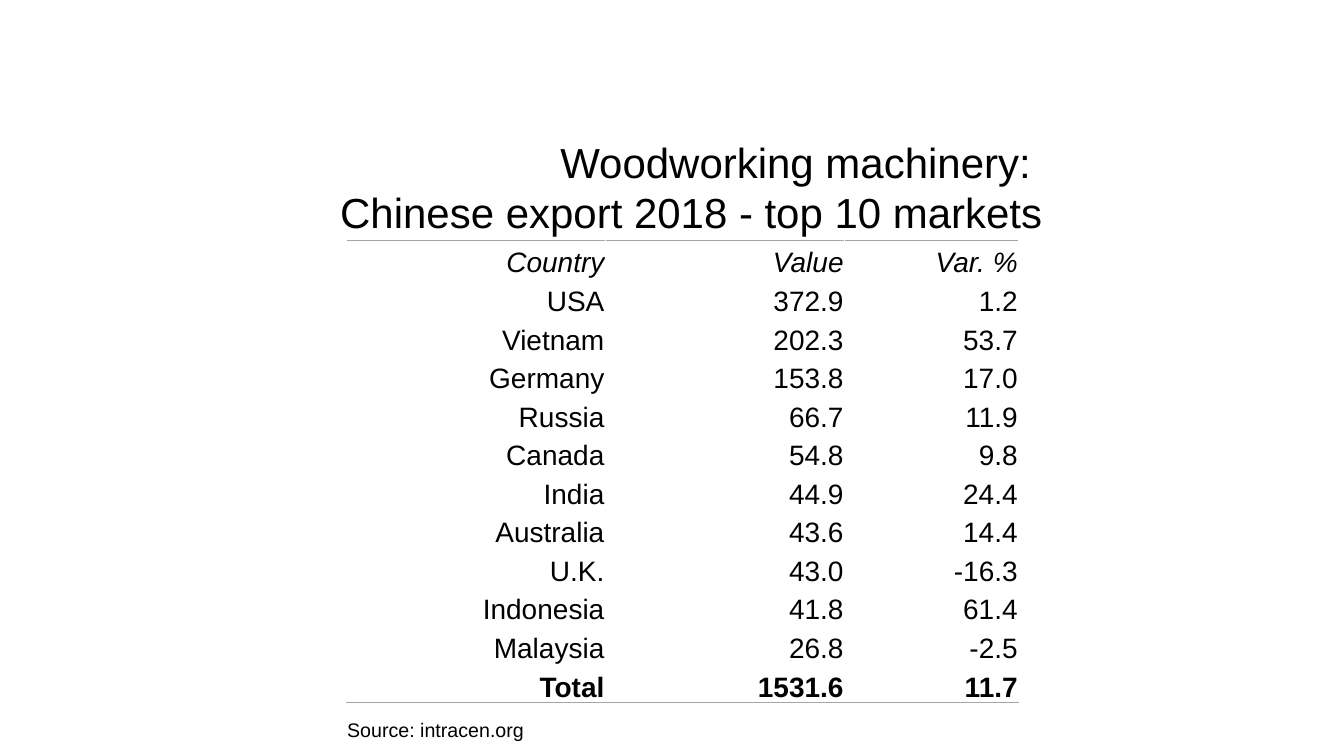
import pptx
import pptx.util
import pptx.dml.color
import pptx.enum.text
import pptx.oxml

PX = 9080
COLORS = {"text": "000000", "rule": "A5A5A5"}
FONT = "Arial"
ALIGN = pptx.enum.text.PP_ALIGN
ANCHOR = pptx.enum.text.MSO_ANCHOR
A_NS = "http://schemas.openxmlformats.org/drawingml/2006/main"

COLUMN_WIDTHS = [259, 239, 174]
EXPORTS = [
    ("Country", "Value", "Var. %"),
    ("USA", "372.9", "1.2"),
    ("Vietnam", "202.3", "53.7"),
    ("Germany", "153.8", "17.0"),
    ("Russia", "66.7", "11.9"),
    ("Canada", "54.8", "9.8"),
    ("India", "44.9", "24.4"),
    ("Australia", "43.6", "14.4"),
    ("U.K.", "43.0", "-16.3"),
    ("Indonesia", "41.8", "61.4"),
    ("Malaysia", "26.8", "-2.5"),
    ("Total", "1531.6", "11.7"),
]


def emu(box):
    return [pptx.util.Emu(v * PX) for v in box]


def write(tf, text, size, align=ALIGN.LEFT, bold=False, italic=False):
    p = tf.paragraphs[0]
    p.text = text
    p.alignment = align
    for r in p.runs:
        r.font.name = FONT
        r.font.size = pptx.util.Pt(size)
        r.font.bold = bold
        r.font.italic = italic
        r.font.color.rgb = pptx.dml.color.RGBColor.from_string(COLORS["text"])


def add_rule(cell, side):
    ln = pptx.oxml.parse_xml(
        f'<a:{side} xmlns:a="{A_NS}" w="12700"><a:solidFill>'
        f'<a:srgbClr val="{COLORS["rule"]}"/></a:solidFill></a:{side}>'
    )
    cell._tc.get_or_add_tcPr().insert(0, ln)


def add_title(s, box):
    title = s.shapes.title
    title.left, title.top, title.width, title.height = emu(box)
    tf = title.text_frame
    tf.word_wrap = True
    tf.auto_size = pptx.enum.text.MSO_AUTO_SIZE.NONE
    tf.vertical_anchor = ANCHOR.TOP
    write(tf, "Woodworking machinery: \vChinese export 2018 - top 10 markets",
          30, align=ALIGN.RIGHT)


def add_export_table(s, box):
    last = len(EXPORTS) - 1
    table = s.shapes.add_table(len(EXPORTS), len(COLUMN_WIDTHS), *emu(box)).table
    table.first_row = False
    table.horz_banding = False
    for column, width in zip(table.columns, COLUMN_WIDTHS):
        column.width = pptx.util.Emu(width * PX)
    for i, values in enumerate(EXPORTS):
        table.rows[i].height = pptx.util.Emu(box[3] * PX // len(EXPORTS))
        for j, value in enumerate(values):
            cell = table.cell(i, j)
            cell.fill.background()
            cell.vertical_anchor = ANCHOR.BOTTOM
            cell.margin_left = cell.margin_right = cell.margin_top = pptx.util.Emu(PX)
            cell.margin_bottom = 0
            write(cell.text_frame, value, 20, align=ALIGN.RIGHT,
                  bold=i == last, italic=i == 0)
            if i == 0:
                add_rule(cell, "lnT")
            elif i == last:
                add_rule(cell, "lnB")


def add_source(s, box):
    tf = s.shapes.add_textbox(*emu(box)).text_frame
    tf.word_wrap = True
    write(tf, "Source: intracen.org", 14)


def main():
    prs = pptx.Presentation()
    prs.slide_width, prs.slide_height = emu((1343, 755))
    s = prs.slides.add_slide(prs.slide_layouts[5])
    add_export_table(s, (346, 240, sum(COLUMN_WIDTHS), 462))
    add_source(s, (337, 712, 218, 34))
    add_title(s, (312, 131, 740, 112))
    prs.save("out.pptx")


if __name__ == "__main__":
    main()
